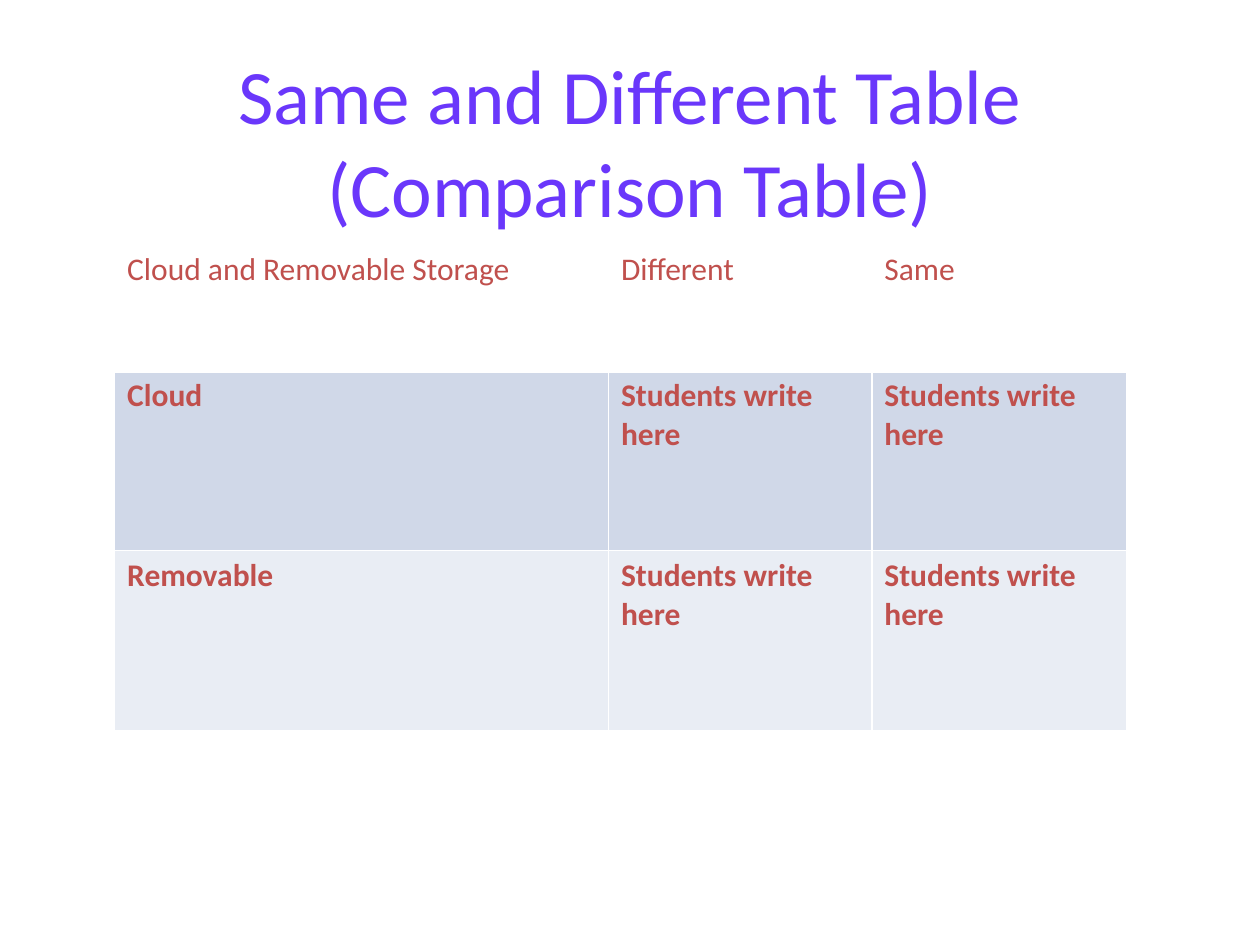
from lxml.etree import SubElement
from pptx import Presentation
from pptx.dml.color import RGBColor
from pptx.enum.text import MSO_ANCHOR, PP_ALIGN
from pptx.oxml.ns import qn
from pptx.util import Inches, Pt

TITLE = "Same and Different Table (Comparison Table)"
PROMPT = "Students write here"
ROWS = [
    ("Cloud and Removable Storage", "Different", "Same"),
    ("Cloud", PROMPT, PROMPT),
    ("Removable", PROMPT, PROMPT),
]
WIDTHS = [3.92, 2.09, 2.02]
HEIGHTS = [1, 1.43, 1.43]
PURPLE = RGBColor(0x6A, 0x37, 0xFB)
RED = RGBColor(0xC0, 0x50, 0x4D)
WHITE = RGBColor(0xFF, 0xFF, 0xFF)
FILLS = [None, RGBColor(0xD0, 0xD8, 0xE8), RGBColor(0xE9, 0xED, 0xF4)]


def write(frame, text, size, color, bold=False):
    """Add one formatted run to the first paragraph of a frame."""
    run = frame.paragraphs[0].add_run()
    run.text = text
    font = run.font
    font.name, font.size, font.bold = "Calibri", Pt(size), bold
    font.color.rgb = color


def edge(cell, sides):
    """Draw white borders, given as a dict of side to width in points."""
    props = cell._tc.get_or_add_tcPr()
    for place, (side, width) in enumerate(sides.items()):
        line = props.makeelement(qn(f"a:ln{side}"), {"w": str(Pt(width))})
        fill = SubElement(line, qn("a:solidFill"))
        SubElement(fill, qn("a:srgbClr"), val=str(WHITE))
        props.insert(place, line)


def add_title(slide):
    """Place and fill the title."""
    title = slide.shapes.title
    title.left, title.top = Inches(0.5), Inches(0.3)
    title.width, title.height = Inches(9), Inches(1.25)
    frame = title.text_frame
    frame.word_wrap = True
    frame.vertical_anchor = MSO_ANCHOR.TOP
    frame.margin_top = Inches(0.08)
    frame.paragraphs[0].alignment = PP_ALIGN.CENTER
    write(frame, TITLE, 44, PURPLE)


def add_grid(slide):
    """Build the comparison table."""
    grid = slide.shapes.add_table(
        len(ROWS), len(WIDTHS), Inches(0.91), Inches(1.94),
        Inches(sum(WIDTHS)), Inches(sum(HEIGHTS))).table
    for col, width in zip(grid.columns, WIDTHS):
        col.width = Inches(width)
    for r, (row, height) in enumerate(zip(ROWS, HEIGHTS)):
        grid.rows[r].height = Inches(height)
        for c, text in enumerate(row):
            cell = grid.cell(r, c)
            if FILLS[r] is None:
                cell.fill.background()
            else:
                cell.fill.solid()
                cell.fill.fore_color.rgb = FILLS[r]
            top, base = (3 if r == 1 else 1), (3 if r == 0 else 1)
            edge(cell, {"L": 1, "R": 1, "T": top, "B": base})
            write(cell.text_frame, text, 18, RED, bold=r > 0)


def main():
    """Build and save the slide."""
    deck = Presentation()
    deck.slide_width, deck.slide_height = Inches(10), Inches(7.5)
    slide = deck.slides.add_slide(deck.slide_layouts[5])
    add_title(slide)
    add_grid(slide)
    deck.save("out.pptx")


if __name__ == "__main__":
    main()
